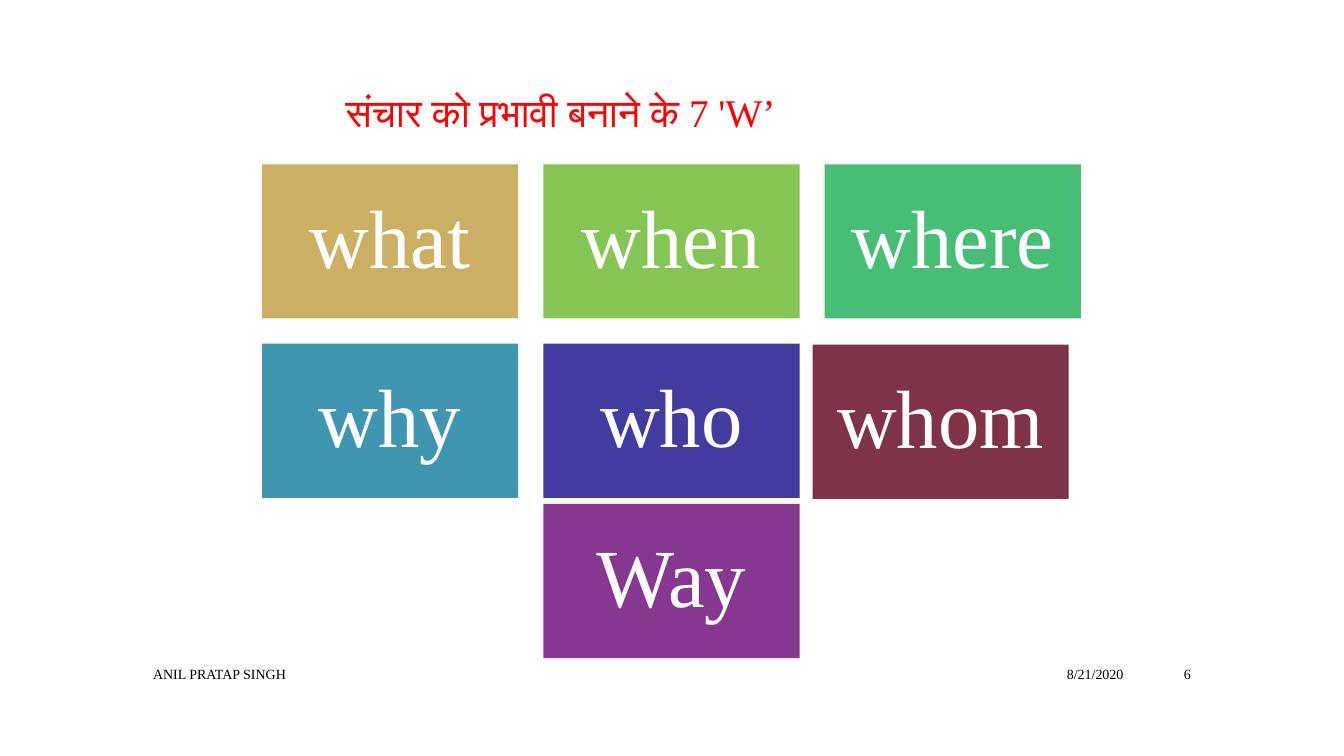
from pptx import Presentation
from pptx import util as u
from pptx.dml.color import RGBColor
from pptx.enum import shapes, text

PX = 9144
FONT = "Times New Roman"
BLACK = RGBColor(0x00, 0x00, 0x00)
WHITE = RGBColor(0xFF, 0xFF, 0xFF)
RED = RGBColor(0xFF, 0x00, 0x00)
SAND = RGBColor(0xCB, 0xAF, 0x62)
LIME = RGBColor(0x85, 0xC5, 0x54)
GREEN = RGBColor(0x46, 0xBE, 0x76)
TEAL = RGBColor(0x40, 0x96, 0xB0)
INDIGO = RGBColor(0x42, 0x3C, 0xA0)
MAROON = RGBColor(0x80, 0x33, 0x48)
PURPLE = RGBColor(0x86, 0x38, 0x90)

LEFT, CENTER, RIGHT = text.PP_ALIGN.LEFT, text.PP_ALIGN.CENTER, text.PP_ALIGN.RIGHT
TOP, MIDDLE = text.MSO_ANCHOR.TOP, text.MSO_ANCHOR.MIDDLE


def px(*lengths):
    return [u.Emu(length * PX) for length in lengths]


def write(frame, words, size, color, align, anchor):
    frame.word_wrap = True
    frame.vertical_anchor = anchor
    paragraph = frame.paragraphs[0]
    paragraph.alignment = align
    run = paragraph.add_run()
    run.text = words
    run.font.name = FONT
    run.font.size = u.Pt(size)
    run.font.color.rgb = color
    return paragraph


def add_label(slide, box, words, size, color, align=LEFT, anchor=MIDDLE):
    label = slide.shapes.add_textbox(*px(*box))
    write(label.text_frame, words, size, color, align, anchor)


def add_tile(slide, box, word, color):
    tile = slide.shapes.add_shape(shapes.MSO_SHAPE.RECTANGLE, *px(*box))
    tile.shadow.inherit = False
    tile.fill.solid()
    tile.fill.fore_color.rgb = color
    tile.line.fill.background()
    frame = tile.text_frame
    frame.margin_left = frame.margin_right = 0
    write(frame, word, 59, WHITE, CENTER, MIDDLE).line_spacing = 0.9


def add_questions(slide, box):
    left, top, width, height = box
    tile_width, tile_height = 254, 153
    column_step = (width - tile_width) // 2
    row_step = 178
    last_row = height - tile_height
    questions = [
        ("what", SAND, 0, 0),
        ("when", LIME, column_step, 0),
        ("where", GREEN, 2 * column_step, 0),
        ("why", TEAL, 0, row_step),
        ("who", INDIGO, column_step, row_step),
        ("Way", PURPLE, column_step, last_row),
        ("whom", MAROON, 2 * column_step - 12, row_step + 1),
    ]
    for word, color, dx, dy in questions:
        add_tile(slide, (left + dx, top + dy, tile_width, tile_height), word, color)


def add_footer(slide, box):
    left, top, width, height = box
    parts = [
        ("ANIL PRATAP SINGH", 0, 799, LEFT),
        ("8/21/2020", 807, 175, RIGHT),
        ("6", width - 59, 59, RIGHT),
    ]
    for words, dx, part_width, align in parts:
        add_label(slide, (left + dx, top, part_width, height), words, 10, BLACK, align)


def main():
    deck = Presentation()
    deck.slide_width, deck.slide_height = px(1333, 750)
    slide = deck.slides.add_slide(deck.slide_layouts[6])
    add_footer(slide, (142, 653, 1049, 31))
    add_label(slide, (333, 83, 667, 57), "संचार को प्रभावी बनाने के 7 'W’", 28, RED, anchor=TOP)
    add_questions(slide, (260, 163, 813, 490))
    deck.save("out.pptx")


if __name__ == "__main__":
    main()
